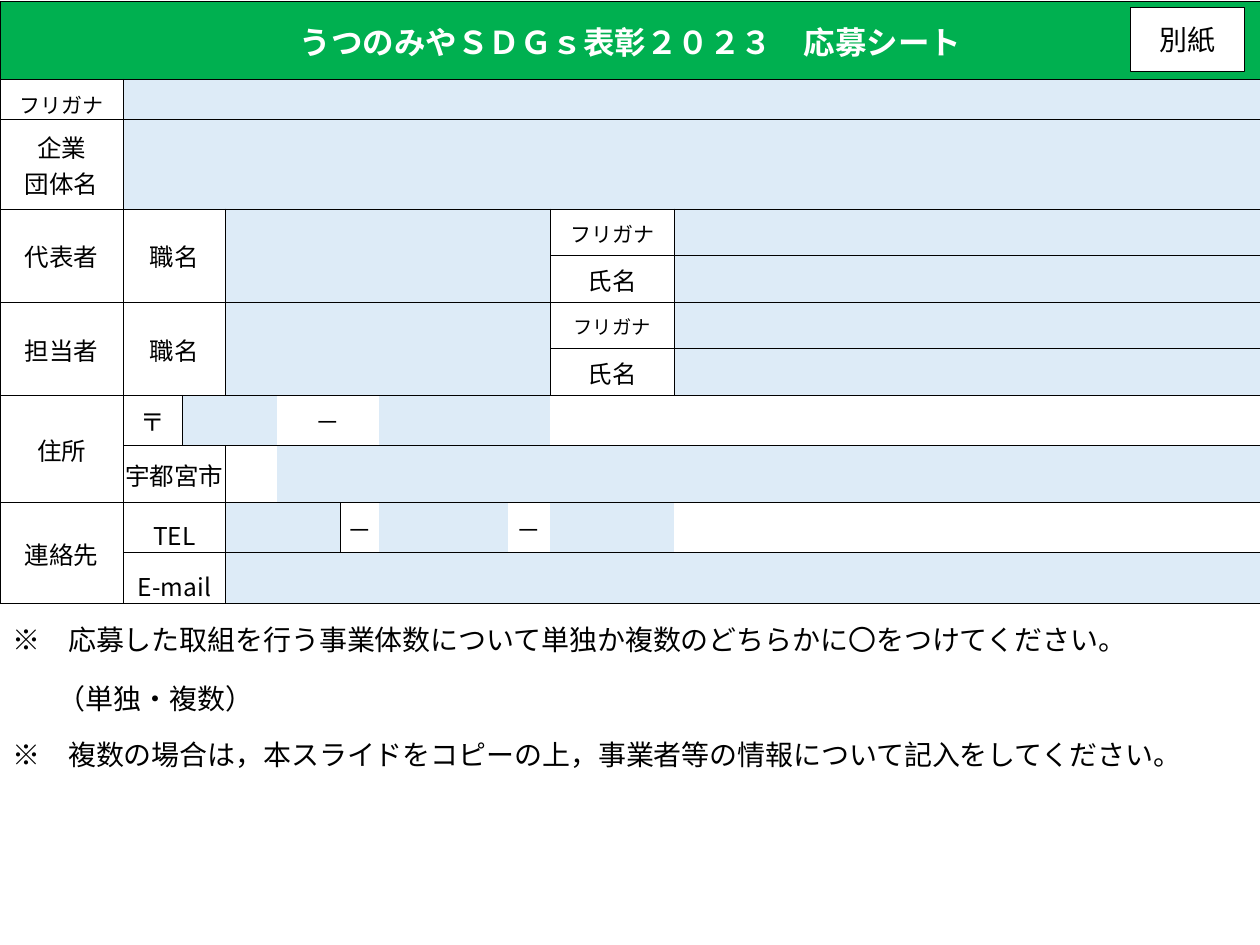
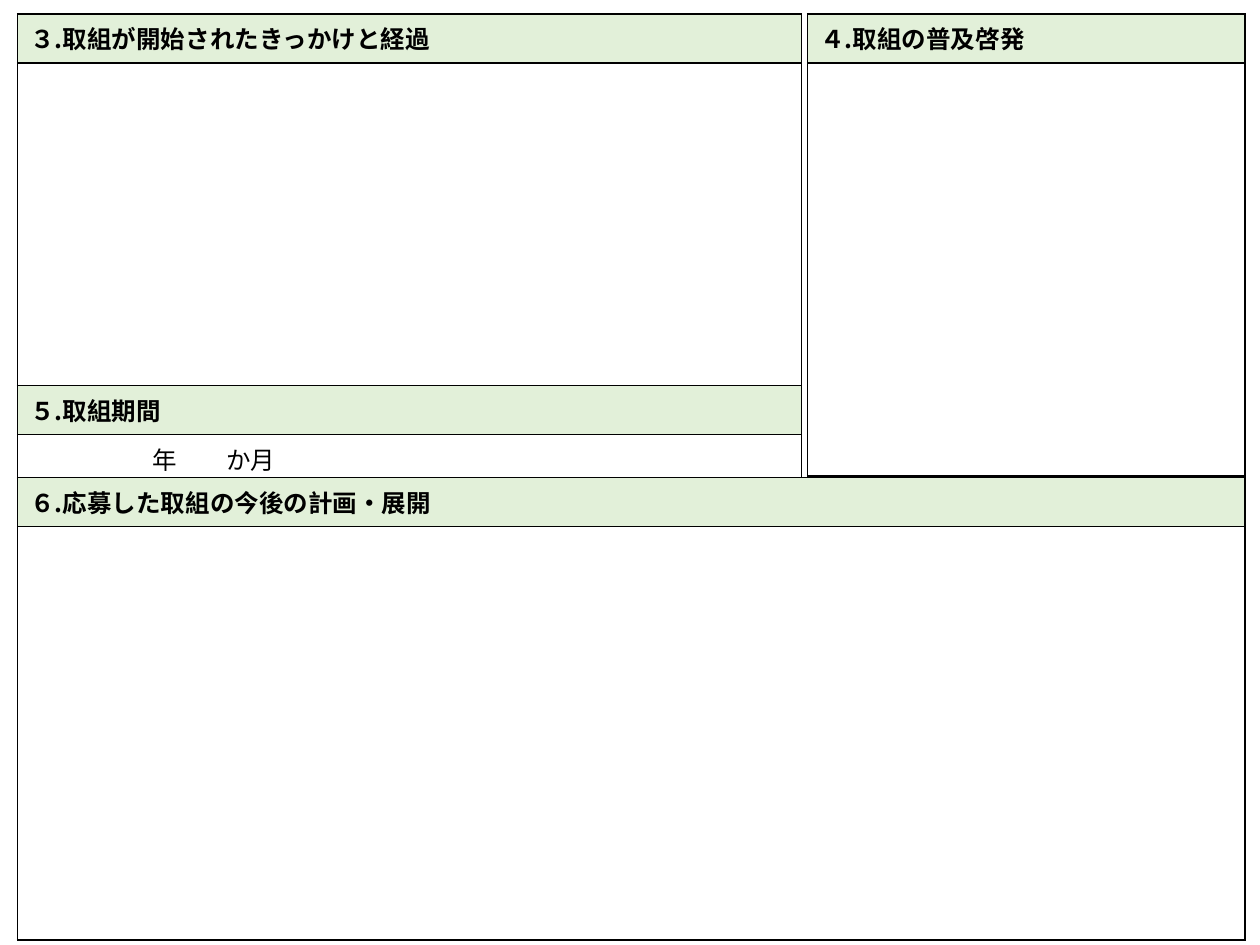
from dataclasses import dataclass
from itertools import product

from lxml.etree import SubElement
from pptx import Presentation
from pptx.dml.color import RGBColor
from pptx.enum.shapes import MSO_SHAPE
from pptx.enum.text import MSO_ANCHOR, PP_ALIGN
from pptx.oxml.ns import qn
from pptx.util import Inches, Pt


@dataclass(frozen=True)
class Theme:
    font: str = "Noto Sans CJK JP"
    badge_font: str = "Calibri"
    ink: str = "000000"
    paper: str = "FFFFFF"
    band: str = "00B050"
    entry: str = "DDEBF7"
    heading: str = "E2F0D9"
    title_size: int = 18
    note_size: int = 16
    label_size: int = 14
    kana_size: int = 12
    small_kana_size: int = 11
    form_line: float = 0.5
    section_line: float = 1


THEME = Theme()
NO_GRID_STYLE = "{2D5ABB26-0587-4C30-8999-92F81FD0307C}"
ALL_SIDES = "LRTB"

FORM_COLUMNS = [0.98, 0.47, 0.34, 0.41, 0.5, 0.31, 1.02, 0.34,
                0.98, 0.98, 0.98, 0.98, 1.72]
FORM_ROWS = [0.62, 0.32, 0.71, 0.37, 0.37, 0.37, 0.37, 0.4, 0.45, 0.4, 0.4]

NOTES = [
    (0, 0, 9.64, "※　応募した取組を行う事業体数について単独か複数のどちらかに〇をつけてください。"),
    (0.36, 0.47, 1.78, "（単独・複数）"),
    (0, 0.91, 9.64, "※　複数の場合は，本スライドをコピーの上，事業者等の情報について記入をしてください。"),
]


# Shared helpers

def style_paragraph(para, size, color=THEME.ink, bold=False,
                    name=THEME.font, align=PP_ALIGN.LEFT):
    para.alignment = align
    font = para.font
    font.size, font.bold, font.name = Pt(size), bold, name
    font.color.rgb = RGBColor.from_string(color)
    SubElement(font._element, qn("a:ea"), typeface=THEME.font)
    if not para.runs:
        para._p.get_or_add_endParaRPr().set("sz", str(size * 100))


def fill_solid(target, color):
    target.fill.solid()
    target.fill.fore_color.rgb = RGBColor.from_string(color)


def draw_borders(cell, sides, width):
    properties = cell._tc.get_or_add_tcPr()
    lines = [side for side in ALL_SIDES if side in sides]
    for position, side in enumerate(lines):
        line = SubElement(properties, qn(f"a:ln{side}"), w=str(Pt(width)))
        solid = SubElement(line, qn("a:solidFill"))
        SubElement(solid, qn("a:srgbClr"), val=THEME.ink)
        properties.insert(position, line)


def add_plain_table(page, box, columns, rows):
    left, top = box
    frame = page.shapes.add_table(
        len(rows), len(columns), Inches(left), Inches(top),
        Inches(sum(columns)), Inches(sum(rows)))
    table = frame.table
    table.first_row = table.horz_banding = False
    table._tbl.tblPr.find(qn("a:tableStyleId")).text = NO_GRID_STYLE
    for column, width in zip(table.columns, columns):
        column.width = Inches(width)
    for row, height in zip(table.rows, rows):
        row.height = Inches(height)
    return table


# Application form

def put_field(table, row, column, span=(1, 1), text="", fill=THEME.paper,
              sides=ALL_SIDES, size=THEME.label_size, color=THEME.ink,
              bold=False, anchor=MSO_ANCHOR.MIDDLE):
    height, width = span
    cell = table.cell(row, column)
    if span != (1, 1):
        cell.merge(table.cell(row + height - 1, column + width - 1))
    for down, across in product(range(height), range(width)):
        part = table.cell(row + down, column + across)
        part.margin_left = part.margin_right = part.margin_top = Inches(0.01)
        part.margin_bottom = 0
        fill_solid(part, fill)
        draw_borders(part, sides, THEME.form_line)
    cell.vertical_anchor = anchor
    cell.text_frame.text = text
    style_paragraph(cell.text_frame.paragraphs[0], size, color, bold,
                    align=PP_ALIGN.CENTER)


def put_entry(table, row, column, span=(1, 1), sides=ALL_SIDES):
    put_field(table, row, column, span, fill=THEME.entry, sides=sides,
              size=THEME.kana_size)


def put_organisation(table):
    put_field(table, 1, 0, text="フリガナ", size=THEME.kana_size,
              anchor=MSO_ANCHOR.BOTTOM)
    put_entry(table, 1, 1, (1, 12), "LRB")
    put_field(table, 2, 0, text="企業\v団体名")
    put_entry(table, 2, 1, (1, 12))


def put_person(table, row, role, kana_size):
    put_field(table, row, 0, (2, 1), role)
    put_field(table, row, 1, (2, 2), "職名")
    put_entry(table, row, 3, (2, 5))
    put_field(table, row, 8, text="フリガナ", size=kana_size)
    put_field(table, row + 1, 8, text="氏名")
    for name_row in (row, row + 1):
        put_entry(table, name_row, 9, (1, 4))


def put_blanks(table, row, first, sides):
    last = len(FORM_COLUMNS) - 1
    for column in range(first, last + 1):
        put_field(table, row, column,
                  sides=sides + "R" if column == last else sides)


def put_address(table):
    put_field(table, 7, 0, (2, 1), "住所")
    put_field(table, 7, 1, text="〒", sides="LT")
    put_entry(table, 7, 2, (1, 2), "T")
    put_field(table, 7, 4, (1, 2), "－", sides="T")
    put_entry(table, 7, 6, (1, 2), "T")
    put_blanks(table, 7, 8, "T")
    put_field(table, 8, 1, (1, 2), "宇都宮市", sides="LB")
    put_field(table, 8, 3, sides="B")
    put_entry(table, 8, 4, (1, 9), "RB")


def put_contact(table):
    put_field(table, 9, 0, (2, 1), "連絡先")
    for row, label in ((9, "TEL"), (10, "E-mail")):
        put_field(table, row, 1, (1, 2), label, anchor=MSO_ANCHOR.BOTTOM)
    put_entry(table, 9, 3, (1, 2), "LTB")
    for column in (5, 7):
        put_field(table, 9, column, text="－", sides="TB")
        put_entry(table, 9, column + 1, sides="TB")
    put_blanks(table, 9, 9, "TB")
    put_entry(table, 10, 3, (1, 10))


def add_form(page, box):
    table = add_plain_table(page, box, FORM_COLUMNS, FORM_ROWS)
    put_field(table, 0, 0, (1, 13), "うつのみやＳＤＧｓ表彰２０２３　応募シート",
              THEME.band, "LRT", THEME.title_size, THEME.paper, True)
    put_organisation(table)
    put_person(table, 3, "代表者", THEME.kana_size)
    put_person(table, 5, "担当者", THEME.small_kana_size)
    put_address(table)
    put_contact(table)


def add_notes(page, box):
    left, top = box
    for across, down, width, text in NOTES:
        note = page.shapes.add_textbox(
            Inches(left + across), Inches(top + down),
            Inches(width), Inches(0.37))
        frame = note.text_frame
        frame.word_wrap = True
        frame.vertical_anchor = MSO_ANCHOR.MIDDLE
        frame.text = text
        style_paragraph(frame.paragraphs[0], THEME.note_size)


def add_badge(page, box):
    badge = page.shapes.add_shape(MSO_SHAPE.RECTANGLE, *map(Inches, box))
    badge.shadow.inherit = False
    fill_solid(badge, THEME.paper)
    badge.line.color.rgb = RGBColor.from_string(THEME.ink)
    badge.line.width = Pt(THEME.form_line)
    frame = badge.text_frame
    frame.vertical_anchor = MSO_ANCHOR.MIDDLE
    frame.text = "別紙"
    style_paragraph(frame.paragraphs[0], THEME.note_size,
                    name=THEME.badge_font, align=PP_ALIGN.CENTER)


def build_form_page(page):
    add_form(page, (0, 0.01))
    add_notes(page, (0, 4.89))
    add_badge(page, (8.97, 0.06, 0.91, 0.51))


# Numbered sections

def add_section(page, box, heading):
    left, top, width, body_height = box
    table = add_plain_table(page, (left, top), [width], [0.39, body_height])
    title, body = table.cell(0, 0), table.cell(1, 0)
    title.text_frame.text = heading
    fill_solid(title, THEME.heading)
    for cell in (title, body):
        draw_borders(cell, ALL_SIDES, THEME.section_line)
        style_paragraph(cell.text_frame.paragraphs[0], THEME.label_size,
                        bold=cell is title)
    return body


def write_period(body):
    # Room for the numbers: five characters before the year, two after it
    para = body.text_frame.paragraphs[0]
    para._p.get_or_add_pPr().set("marL", str(Pt(5 * THEME.label_size)))
    for text, gap in (("年", 2), ("か月", 0)):
        span = para.add_run()
        span.text = text
        if gap:
            spacing = gap * THEME.label_size * 100
            span._r.get_or_add_rPr().set("spc", str(spacing))


def build_sections_page(page):
    add_section(page, (0.14, 0.11, 6.22, 2.56), "３.取組が開始されたきっかけと経過")
    add_section(page, (6.41, 0.11, 3.47, 3.28), "４.取組の普及啓発")
    period = add_section(page, (0.14, 3.06, 6.22, 0.35), "５.取組期間")
    write_period(period)
    add_section(page, (0.14, 3.79, 9.74, 3.28), "６.応募した取組の今後の計画・展開")


def main():
    deck = Presentation()
    deck.slide_width, deck.slide_height = Inches(10), Inches(7.5)
    blank = deck.slide_layouts[6]
    for build in (build_form_page, build_sections_page):
        build(deck.slides.add_slide(blank))
    deck.save("out.pptx")


if __name__ == "__main__":
    main()
